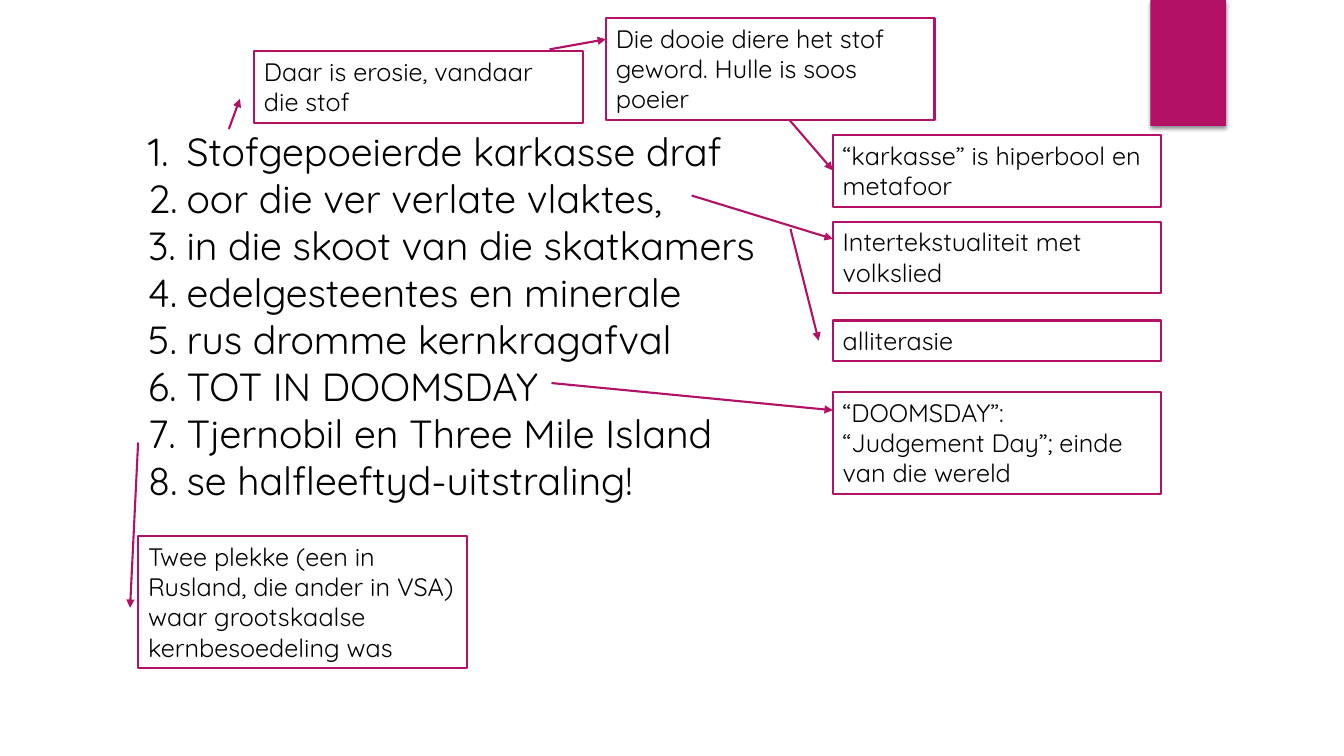
"""Build the annotated poem slide."""
import pptx
import pptx.util
import pptx.dml.color
import pptx.enum.shapes
import pptx.enum.text
import pptx.oxml
import pptx.oxml.ns

PX = 9144
FONT = "Quicksand"
COLOURS = {"accent": "B31166", "text": "000000"}
NOTE_WIDTH = 326
TEXT_FORMAT = {
    "word_wrap": True,
    "vertical_anchor": pptx.enum.text.MSO_ANCHOR.TOP,
    "auto_size": pptx.enum.text.MSO_AUTO_SIZE.SHAPE_TO_FIT_TEXT,
}
PARAGRAPH_FORMAT = {
    "alignment": pptx.enum.text.PP_ALIGN.LEFT,
    "space_before": pptx.util.Pt(0),
    "space_after": pptx.util.Pt(0),
}

POEM = [
    "Stofgepoeierde karkasse draf",
    "oor die ver verlate vlaktes,",
    "in die skoot van die skatkamers",
    "edelgesteentes en minerale",
    "rus dromme kernkragafval",
    "TOT IN DOOMSDAY",
    "Tjernobil en Three Mile Island",
    "se halfleeftyd-uitstraling!",
]
NOTES = [
    (252, 51, 71, "Daar is erosie, vandaar die stof"),
    (826, 134, 71, "“karkasse” is hiperbool en metafoor"),
    (826, 220, 71, "Intertekstualiteit met volkslied"),
    (826, 318, 40, "alliterasie"),
    (826, 389, 101, "“DOOMSDAY”: “Judgement Day”; einde van die wereld"),
    (601, 18, 101, "Die dooie diere het stof geword. Hulle is soos poeier"),
    (137, 532, 131, "Twee plekke (een in Rusland, die ander in VSA) "
                    "waar grootskaalse kernbesoedeling was"),
]
ARROWS = [
    (227, 128, 238, 98),
    (137, 439, 129, 603),
    (784, 227, 812, 338),
    (686, 194, 826, 237),
    (783, 119, 826, 169),
    (545, 49, 601, 39),
    (547, 380, 826, 407),
]


def emu(*lengths):
    return [pptx.util.Emu(length * PX) for length in lengths]


def colour(name):
    return pptx.dml.color.RGBColor.from_string(COLOURS[name])


def apply_format(target, values):
    for name, value in values.items():
        setattr(target, name, value)


def append_xml(parent, tag, content="", attributes=""):
    namespace = pptx.oxml.ns.nsdecls("a")
    parent.append(pptx.oxml.parse_xml(
        f"<a:{tag} {namespace} {attributes}>{content}</a:{tag}>"))


def format_paragraph(paragraph, size):
    apply_format(paragraph, PARAGRAPH_FORMAT)
    apply_format(paragraph.font, {"name": FONT, "size": pptx.util.Pt(size)})
    paragraph.font.color.rgb = colour("text")


def format_line(line):
    line.color.rgb = colour("accent")
    line.width = pptx.util.Pt(1.5)


def add_banner(slide):
    shape = slide.shapes.add_shape(
        pptx.enum.shapes.MSO_SHAPE.RECTANGLE, *emu(1141, 0, 75, 125))
    shape.fill.solid()
    shape.fill.fore_color.rgb = colour("accent")
    shape.line.fill.background()
    append_xml(
        shape.element.spPr, "effectLst",
        '<a:outerShdw blurRad="38100" dist="25400" dir="5400000" rotWithShape="0">'
        f'<a:srgbClr val="{COLOURS["text"]}"><a:alpha val="45000"/></a:srgbClr>'
        "</a:outerShdw>")


def fill_poem(slide):
    body = slide.placeholders[1]
    left, top, width, height = emu(137, 121, 667, 387)
    apply_format(body, {"left": left, "top": top, "width": width, "height": height})
    apply_format(body.text_frame, TEXT_FORMAT)
    body.text_frame.text = "\n".join(POEM)
    indent = 38 * PX
    for paragraph in body.text_frame.paragraphs:
        properties = paragraph._p.get_or_add_pPr()
        apply_format(paragraph, PARAGRAPH_FORMAT)
        properties.set("marL", str(indent))
        properties.set("indent", str(-indent))
        append_xml(properties, "buFont", attributes='typeface="+mj-lt"')
        append_xml(properties, "buAutoNum", attributes='type="arabicPeriod"')
        format_paragraph(paragraph, 28)


def add_note(slide, left, top, height, text):
    shape = slide.shapes.add_textbox(*emu(left, top, NOTE_WIDTH, height))
    format_line(shape.line)
    apply_format(shape.text_frame, TEXT_FORMAT)
    shape.text_frame.text = text
    format_paragraph(shape.text_frame.paragraphs[0], 18)


def add_arrow(slide, *ends):
    connector = slide.shapes.add_connector(
        pptx.enum.shapes.MSO_CONNECTOR.STRAIGHT, *emu(*ends))
    format_line(connector.line)
    append_xml(connector.line._get_or_add_ln(), "tailEnd", attributes='type="triangle"')
    append_xml(connector.element.spPr, "effectLst")


def main():
    presentation = pptx.Presentation()
    presentation.slide_width, presentation.slide_height = emu(1333, 750)
    slide = presentation.slides.add_slide(presentation.slide_layouts[1])
    title = slide.shapes.title.element
    title.getparent().remove(title)
    add_banner(slide)
    fill_poem(slide)
    for note in NOTES:
        add_note(slide, *note)
    for arrow in ARROWS:
        add_arrow(slide, *arrow)
    presentation.save("out.pptx")


if __name__ == "__main__":
    main()
